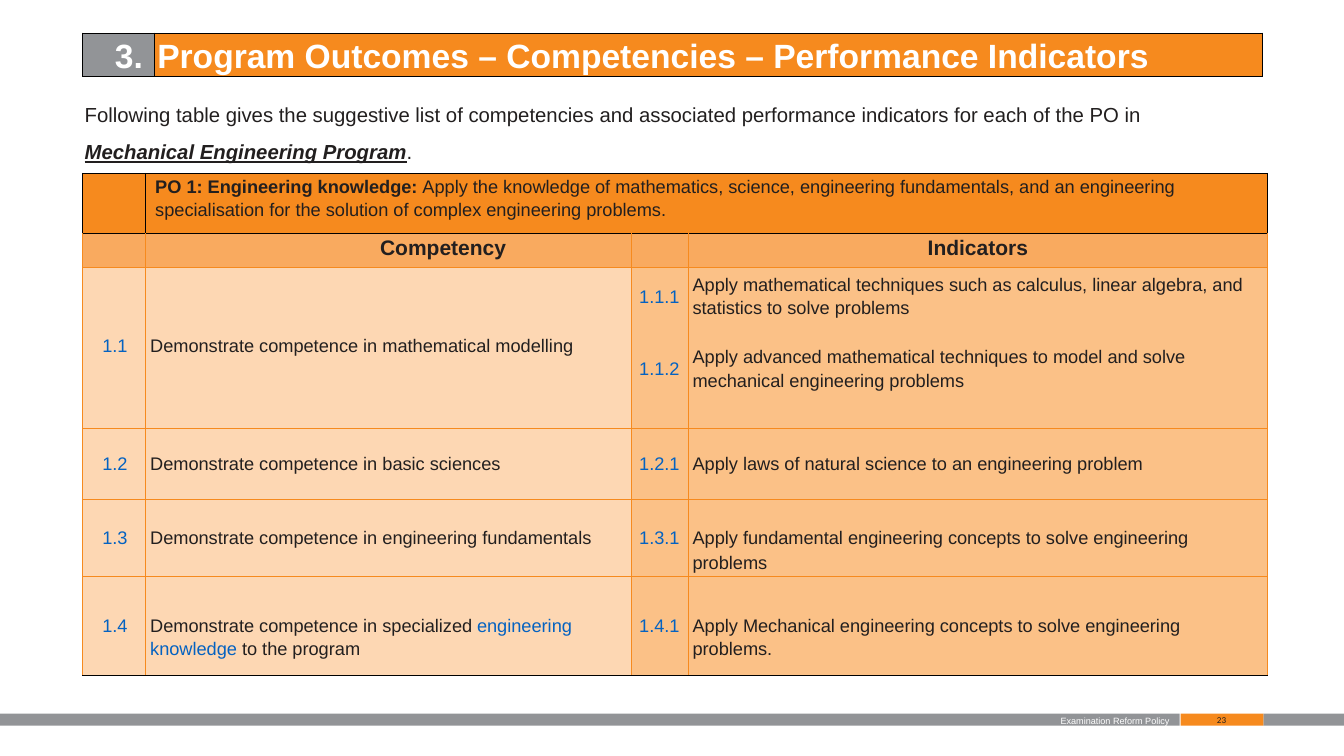
from dataclasses import dataclass
from typing import Any, Optional

from lxml import etree
from pptx import Presentation
from pptx.dml.color import RGBColor
from pptx.enum.shapes import MSO_SHAPE
from pptx.enum.text import PP_ALIGN
from pptx.oxml.ns import qn
from pptx.util import Inches, Pt

RECTANGLE = MSO_SHAPE.RECTANGLE
LEFT, CENTER = PP_ALIGN.LEFT, PP_ALIGN.CENTER

# The slide is a grid of 1333 columns by 750 rows
COLUMNS, ROWS = 1333, 750
CELL = Inches(0.01)


@dataclass(frozen=True)
class Theme:
    orange: str = "F68A1E"
    header: str = "F9AA5F"
    competency: str = "FDD7B3"
    indicator: str = "FBC187"
    grey: str = "929497"
    white: str = "FFFFFF"
    black: str = "000000"
    ink: str = "221F1F"
    blue: str = "0462C1"
    font: str = "Arial"
    number_font: str = "Calibri"
    title: float = 24
    heading: float = 15
    intro: float = 14.5
    body: float = 13
    footer: float = 6.5


THEME = Theme()


@dataclass(frozen=True)
class Run:
    text: str
    color: str = THEME.ink
    bold: bool = False
    italic: bool = False
    underline: bool = False


@dataclass(frozen=True)
class Line:
    runs: tuple[Run, ...]
    before: float = 0
    spacing: Optional[float] = None


@dataclass(frozen=True)
class Box:
    left: int
    top: int
    width: int
    height: int


@dataclass(frozen=True)
class Entry:
    fill: str
    lines: tuple[Line, ...] = ()
    left: int = 0
    top: int = 0
    size: float = THEME.body
    align: PP_ALIGN = LEFT
    top_edge: str = THEME.orange
    bottom_edge: str = THEME.orange
    side_edge: str = THEME.orange


@dataclass(frozen=True)
class Outcome:
    code: str
    competency: tuple[Line, ...]
    indicator_codes: tuple[Line, ...]
    indicators: tuple[Line, ...]
    tops: tuple[int, int, int]


def apply(target: Any, values: dict[str, Any]) -> None:
    for attribute, value in values.items():
        setattr(target, attribute, value)


def line(text: str, color: str = THEME.ink, before: float = 0,
         spacing: Optional[float] = None, bold: bool = False) -> Line:
    return Line((Run(text, color, bold),), before, spacing)


def place(box: Box) -> tuple[int, ...]:
    return tuple(n * CELL for n in (box.left, box.top, box.width, box.height))


def write(frame: Any, lines: tuple[Line, ...], size: float,
          align: PP_ALIGN = LEFT, font: str = THEME.font) -> None:
    for index, item in enumerate(lines):
        paragraph = frame.add_paragraph() if index else frame.paragraphs[0]
        apply(paragraph, {"alignment": align, "space_before": Pt(item.before)})
        if item.spacing:
            paragraph.line_spacing = Pt(item.spacing)
        for part in item.runs:
            run = paragraph.add_run()
            run.text = part.text
            apply(run.font, {"name": font, "size": Pt(size), "bold": part.bold,
                             "italic": part.italic, "underline": part.underline})
            run.font.color.rgb = RGBColor.from_string(part.color)


def add_bar(slide: Any, box: Box, color: str) -> None:
    bar = slide.shapes.add_shape(RECTANGLE, *place(box))
    bar.shadow.inherit = False
    bar.fill.solid()
    bar.fill.fore_color.rgb = RGBColor.from_string(color)
    bar.line.fill.background()


def add_text(slide: Any, box: Box, lines: tuple[Line, ...], size: float,
             left: int = 1, top: int = 0, font: str = THEME.font) -> None:
    frame = slide.shapes.add_textbox(*place(box)).text_frame
    apply(frame, {"word_wrap": True, "margin_left": left * CELL, "margin_top": top * CELL,
                  "margin_right": 0, "margin_bottom": 0})
    write(frame, lines, size, font=font)


def add_edge(cell: Any, side: str, color: str) -> None:
    width = Pt(1) if color == THEME.black else Pt(0.75)
    edge = etree.SubElement(cell._tc.get_or_add_tcPr(), qn(f"a:ln{side}"), w=str(width))
    fill = etree.SubElement(edge, qn("a:solidFill"))
    etree.SubElement(fill, qn("a:srgbClr"), val=color)


def add_grid(slide: Any, left: int, top: int, widths: list[int], heights: list[int],
             entries: list[list[Entry]]) -> Any:
    box = Box(left, top, sum(widths), sum(heights))
    table = slide.shapes.add_table(len(heights), len(widths), *place(box)).table
    apply(table, {"first_row": False, "horz_banding": False})
    for column, width in zip(table.columns, widths):
        column.width = width * CELL
    for row, height, row_entries in zip(table.rows, heights, entries):
        row.height = height * CELL
        for cell, entry in zip(row.cells, row_entries):
            apply(cell, {"margin_left": entry.left * CELL, "margin_top": entry.top * CELL,
                         "margin_right": 0, "margin_bottom": 0})
            for side, color in zip("LRTB", (entry.side_edge, entry.side_edge,
                                            entry.top_edge, entry.bottom_edge)):
                add_edge(cell, side, color)
            cell.fill.solid()
            cell.fill.fore_color.rgb = RGBColor.from_string(entry.fill)
            write(cell.text_frame, entry.lines, entry.size, entry.align)
    return table


def framed(fill: str, lines: tuple[Line, ...] = (), **layout: Any) -> Entry:
    return Entry(fill, lines, top_edge=THEME.black, bottom_edge=THEME.black,
                 side_edge=THEME.black, **layout)


def outcome_row(outcome: Outcome, bottom: str) -> list[Entry]:
    main, code, text = outcome.tops
    return [
        Entry(THEME.competency, (line(outcome.code, THEME.blue),), 2, main,
              align=CENTER, bottom_edge=bottom),
        Entry(THEME.competency, outcome.competency, 5, main, bottom_edge=bottom),
        Entry(THEME.indicator, outcome.indicator_codes, 8, code, bottom_edge=bottom),
        Entry(THEME.indicator, outcome.indicators, 4, text, bottom_edge=bottom),
    ]


OUTCOMES = [
    Outcome("1.1", (line("Demonstrate competence in mathematical modelling"),),
            (line("1.1.1", THEME.blue), line("1.1.2", THEME.blue, 37)),
            (line("Apply mathematical techniques such as calculus, linear algebra, and "
                  "statistics to solve problems", spacing=17),
             line("Apply advanced mathematical techniques to model and solve "
                  "mechanical engineering problems", before=18, spacing=17)), (68, 20, 4)),
    Outcome("1.2", (line("Demonstrate competence in basic sciences"),),
            (line("1.2.1", THEME.blue),),
            (line("Apply laws of natural science to an engineering problem"),), (25, 25, 25)),
    Outcome("1.3", (line("Demonstrate competence in engineering fundamentals"),),
            (line("1.3.1", THEME.blue),),
            (line("Apply fundamental engineering concepts to solve engineering"),
             line("problems", before=3)), (29, 29, 29)),
    Outcome("1.4", (Line((Run("Demonstrate competence in specialized "),
                          Run("engineering", THEME.blue))),
                    Line((Run("knowledge ", THEME.blue), Run("to the program")), 2.2)),
            (line("1.4.1", THEME.blue),),
            (line("Apply Mechanical engineering concepts to solve engineering"),
             line("problems.", before=2.2)), (39, 39, 39)),
]


def main() -> None:
    deck = Presentation()
    apply(deck, {"slide_width": COLUMNS * CELL, "slide_height": ROWS * CELL})
    slide = deck.slides.add_slide(deck.slide_layouts[6])

    # Footer
    add_bar(slide, Box(0, 708, 1170, 12), THEME.grey)
    add_bar(slide, Box(1253, 708, COLUMNS - 1253, 12), THEME.grey)
    add_bar(slide, Box(1171, 708, 82, 12), THEME.orange)
    add_text(slide, Box(1051, 709, 118, 13),
             (line("Examination Reform Policy", THEME.white),), THEME.footer, top=1)
    add_text(slide, Box(1203, 709, 18, 12), (line("23", spacing=7.3),),
             THEME.footer, left=4, font=THEME.number_font)

    # Title
    titles = ((THEME.grey, "3.", 32),
              (THEME.orange, "Program Outcomes – Competencies – Performance Indicators", 3))
    add_grid(slide, 82, 33, [71, 1099], [43], [[
        framed(fill, (line(text, THEME.white, spacing=28.4, bold=True),),
               left=left, top=3, size=THEME.title) for fill, text, left in titles]])

    # Introduction
    add_text(slide, Box(83, 86, 1080, 76), (
        line("Following table gives the suggestive list of competencies and associated "
             "performance indicators for each of the PO in"),
        Line((Run("Mechanical Engineering Program", bold=True, italic=True, underline=True),
              Run(".")), 9.5)), THEME.intro, top=15)

    # Outcome table
    statement = (Line((Run("PO 1: Engineering knowledge: ", bold=True),
                       Run("Apply the knowledge of mathematics, science, engineering "
                           "fundamentals, and an engineering"))),
                 line("specialisation for the solution of complex engineering problems.",
                      before=2))
    blank = Entry(THEME.header, top_edge=THEME.black)
    headings = [Entry(THEME.header, (line(text, bold=True),), left, 3, THEME.heading, align,
                      top_edge=THEME.black)
                for text, left, align in (("Competency", 233, LEFT), ("Indicators", 0, CENTER))]
    entries = [[framed(THEME.orange), framed(THEME.orange, statement, left=10, top=4),
                framed(THEME.orange), framed(THEME.orange)],
               [blank, headings[0], blank, headings[1]]]
    entries += [outcome_row(outcome, THEME.black if outcome is OUTCOMES[-1] else THEME.orange)
                for outcome in OUTCOMES]
    table = add_grid(slide, 82, 172, [62, 482, 57, 574], [60, 33, 160, 70, 77, 98], entries)
    table.cell(0, 1).merge(table.cell(0, 3))

    deck.save("out.pptx")


if __name__ == "__main__":
    main()
